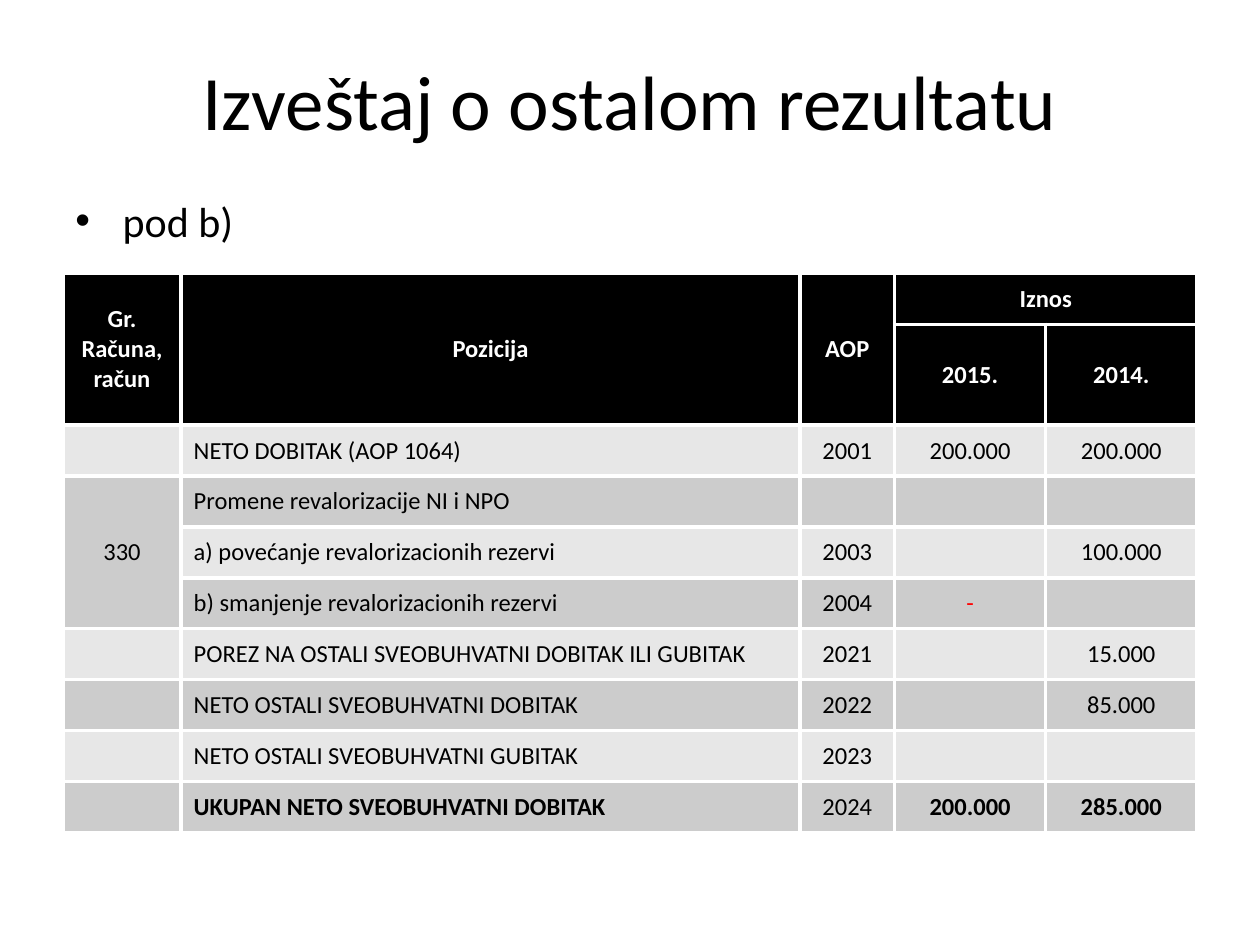
from lxml import etree
from pptx import Presentation
from pptx.dml.color import RGBColor
from pptx.enum import text
from pptx.oxml import ns
from pptx.util import Pt

FONT = "Calibri"
COLORS = {
    "ink": "000000",
    "paper": "FFFFFF",
    "light_band": "E7E7E7",
    "dark_band": "CCCCCC",
    "alert": "FF0000",
}
COLUMN_WIDTHS = [67.5, 353.7, 54, 86.4, 86.4]
ROW_HEIGHT = 29.1
HEADER_ROWS = 2
STATEMENT = [
    ["Gr. Računa, račun", "Pozicija", "AOP", "Iznos", ""],
    ["", "", "", "2015.", "2014."],
    ["", "NETO DOBITAK (AOP 1064)", "2001", "200.000", "200.000"],
    ["330", "Promene revalorizacije NI i NPO", "", "", ""],
    ["", "a) povećanje revalorizacionih rezervi", "2003", "", "100.000"],
    ["", "b) smanjenje revalorizacionih rezervi", "2004", "-", ""],
    ["", "POREZ NA OSTALI SVEOBUHVATNI DOBITAK ILI GUBITAK", "2021", "", "15.000"],
    ["", "NETO OSTALI SVEOBUHVATNI DOBITAK", "2022", "", "85.000"],
    ["", "NETO OSTALI SVEOBUHVATNI GUBITAK", "2023", "", ""],
    ["", "UKUPAN NETO SVEOBUHVATNI DOBITAK", "2024", "200.000", "285.000"],
]
MERGES = [(0, 0, 1, 0), (0, 1, 1, 1), (0, 2, 1, 2), (0, 3, 0, 4), (3, 0, 5, 0)]


def rgb(name):
    return RGBColor.from_string(COLORS[name])


def add_run(paragraph, wording, size, color="ink", bold=False):
    run = paragraph.add_run()
    run.text = wording
    run.font.name = FONT
    run.font.size = Pt(size)
    run.font.bold = bold
    run.font.color.rgb = rgb(color)


def add_text_frame(slide, left, top, width, height):
    frame = slide.shapes.add_textbox(Pt(left), Pt(top), Pt(width), Pt(height)).text_frame
    frame.word_wrap = True
    return frame


def add_title(slide, left, top, width, height):
    title = add_text_frame(slide, left, top, width, height)
    title.vertical_anchor = text.MSO_ANCHOR.MIDDLE
    heading = title.paragraphs[0]
    heading.alignment = text.PP_ALIGN.CENTER
    add_run(heading, "Izveštaj o ostalom rezultatu", 44)


def add_body(slide, left, top, width, height):
    point = add_text_frame(slide, left, top, width, height).paragraphs[0]
    properties = point._p.get_or_add_pPr()
    properties.set("marL", str(Pt(27)))
    properties.set("indent", str(Pt(-27)))
    etree.SubElement(properties, ns.qn("a:buFont"), typeface="Arial")
    etree.SubElement(properties, ns.qn("a:buChar"), char="•")
    add_run(point, "pod b)", 24)


def add_borders(cell):
    properties = cell._tc.get_or_add_tcPr()
    for position, side in enumerate(("lnL", "lnR", "lnT", "lnB")):
        line = etree.Element(ns.qn("a:" + side), w=str(Pt(2.25)))
        fill = etree.SubElement(line, ns.qn("a:solidFill"))
        etree.SubElement(fill, ns.qn("a:srgbClr"), val=COLORS["paper"])
        properties.insert(position, line)


def fill_cell(cell, wording, row, column):
    header = row < HEADER_ROWS
    band = "ink" if header else ("light_band", "dark_band")[row % 2]
    cell.fill.solid()
    cell.fill.fore_color.rgb = rgb(band)
    cell.vertical_anchor = text.MSO_ANCHOR.MIDDLE
    add_borders(cell)
    if not wording:
        return
    entry = cell.text_frame.paragraphs[0]
    if header or column != 1:
        entry.alignment = text.PP_ALIGN.CENTER
    total = row == len(STATEMENT) - 1 and column != 2
    color = "paper" if header else "alert" if wording == "-" else "ink"
    add_run(entry, wording, 14, color, header or total)


def add_statement(slide, left, top):
    table = slide.shapes.add_table(
        len(STATEMENT), len(COLUMN_WIDTHS), Pt(left), Pt(top),
        Pt(sum(COLUMN_WIDTHS)), Pt(ROW_HEIGHT * len(STATEMENT)),
    ).table
    for column, width in zip(table.columns, COLUMN_WIDTHS):
        column.width = Pt(width)
    for row in table.rows:
        row.height = Pt(ROW_HEIGHT)
    for r, entries in enumerate(STATEMENT):
        for c, wording in enumerate(entries):
            fill_cell(table.cell(r, c), wording, r, c)
    for first_row, first_column, last_row, last_column in MERGES:
        table.cell(first_row, first_column).merge(table.cell(last_row, last_column))


def main():
    presentation = Presentation()
    presentation.slide_width = Pt(720)
    presentation.slide_height = Pt(540)
    slide = presentation.slides.add_slide(presentation.slide_layouts[6])
    add_title(slide, 36, 12, 648, 90)
    add_statement(slide, 36, 156.2)
    add_body(slide, 36, 108, 648, 402)
    presentation.save("out.pptx")


if __name__ == "__main__":
    main()
